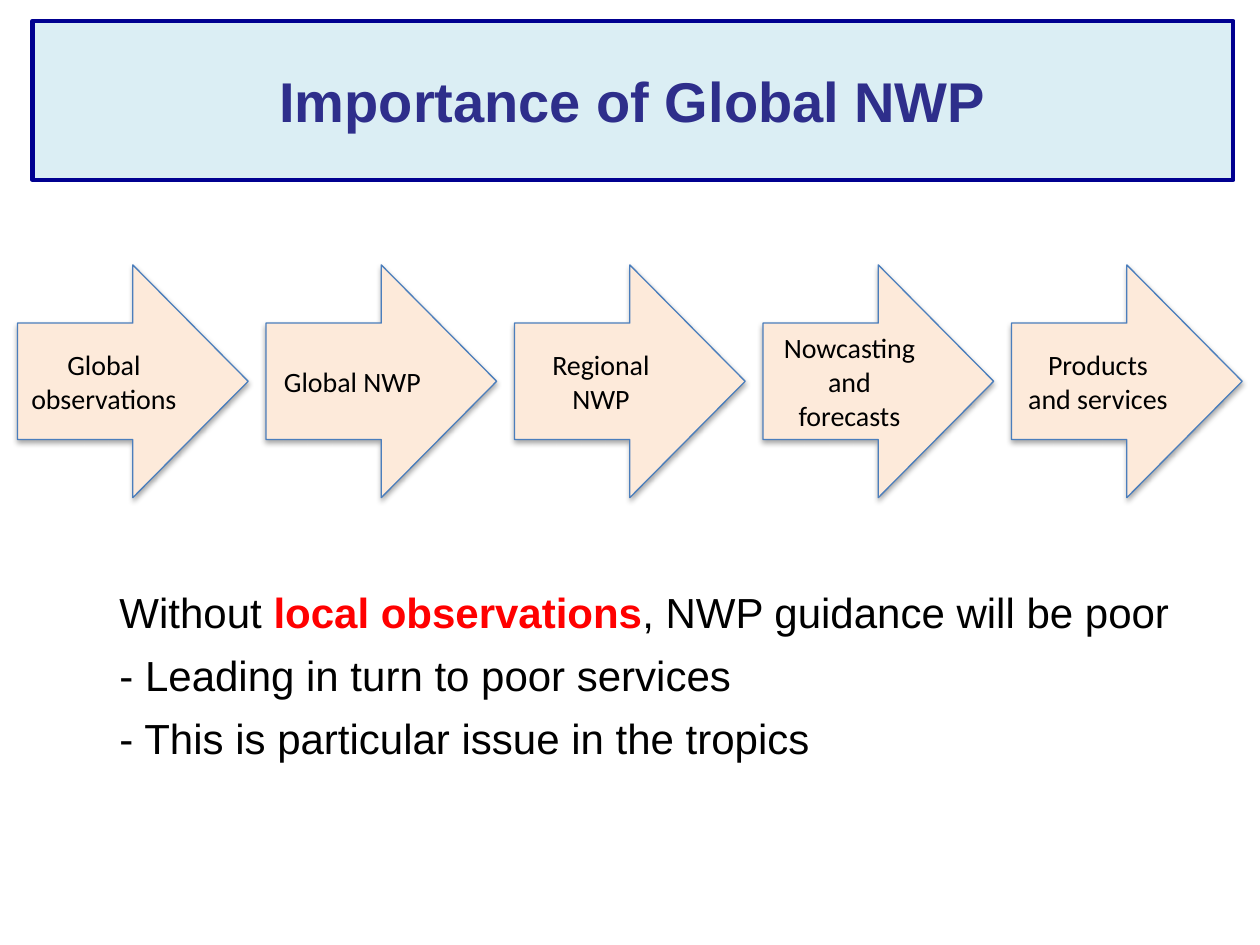
from pptx import Presentation
from pptx.dml.color import RGBColor
from pptx.enum.shapes import MSO_SHAPE as Shape
from pptx.enum.text import MSO_ANCHOR as Anchor, PP_ALIGN as Align
from pptx.oxml import parse_xml
from pptx.oxml.ns import nsdecls
from pptx.util import Pt

STAGES = ["Global observations", "Global NWP", "Regional NWP",
          "Nowcasting and forecasts", "Products and services"]
MESSAGES = [
    [("Without ", False), ("local observations", True),
     (", NWP guidance will be poor", False)],
    [("- Leading in turn to poor services", False)],
    [("- This is particular issue in the tropics", False)],
]


def color(value):
    return RGBColor.from_string(value)


def style_font(font, name, size, value, bold=False):
    font.name = name
    font.size = Pt(size)
    font.bold = bold
    font.color.rgb = color(value)


def add_panel(slide, kind, box, fill, line, line_width, text):
    panel = slide.shapes.add_shape(kind, *map(Pt, box))
    panel.shadow.inherit = False
    panel.fill.solid()
    panel.fill.fore_color.rgb = color(fill)
    panel.line.color.rgb = color(line)
    panel.line.width = Pt(line_width)
    frame = panel.text_frame
    frame.word_wrap = True
    frame.vertical_anchor = Anchor.MIDDLE
    frame.text = text
    frame.paragraphs[0].alignment = Align.CENTER
    return panel


def add_soft_shadow(panel):
    properties = panel.element.spPr
    properties.remove(properties.find(
        "{http://schemas.openxmlformats.org/drawingml/2006/main}effectLst"))
    properties.append(parse_xml(
        f'<a:effectLst {nsdecls("a")}>'
        '<a:outerShdw blurRad="40000" dist="23000" dir="5400000" rotWithShape="0">'
        '<a:srgbClr val="000000"><a:alpha val="35000"/></a:srgbClr>'
        '</a:outerShdw></a:effectLst>'))


def add_title(slide, box):
    title = add_panel(slide, Shape.RECTANGLE, box, "DBEEF4", "000090", 2.5,
                      "Importance of Global NWP")
    style_font(title.text_frame.paragraphs[0].runs[0].font,
               "Arial", 32, "2E2E8B", True)


def add_stages(slide, left, top, width, height):
    arrow_width = 131.8
    pitch = (width - arrow_width) / (len(STAGES) - 1)
    for index, stage in enumerate(STAGES):
        arrow = add_panel(slide, Shape.RIGHT_ARROW,
                          (left + index * pitch, top, arrow_width, height),
                          "FDEADA", "4B7EBC", 0.75, stage)
        add_soft_shadow(arrow)
        style_font(arrow.text_frame.paragraphs[0].runs[0].font,
                   "Calibri", 16, "000000")


def add_messages(slide, box):
    frame = slide.shapes.add_textbox(*map(Pt, box)).text_frame
    frame.word_wrap = True
    frame.margin_top = Pt(5.5)
    for index, message in enumerate(MESSAGES):
        paragraph = frame.add_paragraph() if index else frame.paragraphs[0]
        properties = paragraph._p.get_or_add_pPr()
        properties.set("marL", str(Pt(62)))
        properties.set("indent", str(Pt(-27.4)))
        paragraph.space_before = Pt(7.2 if index else 0)
        for text, emphasized in message:
            run = paragraph.add_run()
            run.text = text
            style_font(run.font, "Arial", 24,
                       "FF0000" if emphasized else "000000", emphasized)


def main():
    deck = Presentation()
    deck.slide_width = Pt(720)
    deck.slide_height = Pt(540)
    slide = deck.slides.add_slide(deck.slide_layouts[6])
    add_messages(slide, (26.6, 329.8, 680.4, 99.4))
    add_stages(slide, 10, 151.4, 699.8, 133)
    add_title(slide, (18.6, 12, 686.2, 90.8))
    deck.save("out.pptx")


if __name__ == "__main__":
    main()
